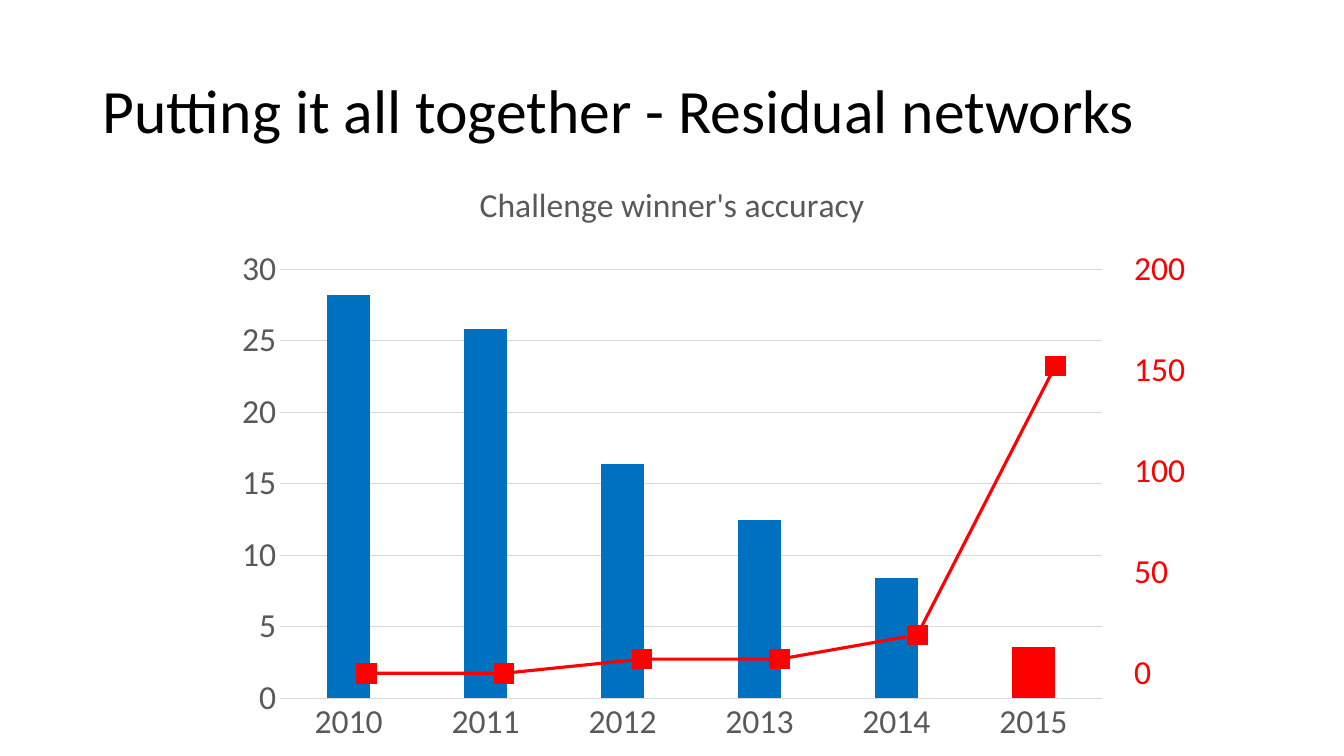
from lxml import etree
from pptx import Presentation
from pptx.chart.data import CategoryChartData
from pptx.dml.color import RGBColor
from pptx.enum.chart import (
    XL_AXIS_CROSSES,
    XL_CHART_TYPE,
    XL_MARKER_STYLE,
    XL_TICK_LABEL_POSITION,
    XL_TICK_MARK,
)
from pptx.enum.text import MSO_ANCHOR, PP_ALIGN
from pptx.oxml import parse_xml
from pptx.oxml.ns import nsdecls, qn
from pptx.util import Inches, Pt

COLUMNS = XL_CHART_TYPE.COLUMN_CLUSTERED
LINE = XL_CHART_TYPE.LINE_MARKERS
SQUARE = XL_MARKER_STYLE.SQUARE
AT_MAXIMUM = XL_AXIS_CROSSES.MAXIMUM
FAR_SIDE = XL_TICK_LABEL_POSITION.HIGH
NO_TICK = XL_TICK_MARK.NONE
MIDDLE = MSO_ANCHOR.MIDDLE
LEFT = PP_ALIGN.LEFT

BLACK = RGBColor(0x00, 0x00, 0x00)
GREY = RGBColor(0x59, 0x59, 0x59)
PALE = RGBColor(0xD9, 0xD9, 0xD9)
BLUE = RGBColor(0x00, 0x70, 0xC0)
RED = RGBColor(0xFF, 0x00, 0x00)

ACCURACY = "Challenge winner's accuracy"
ERRORS = {"2010": 28.2, "2011": 25.8, "2012": 16.4, "2013": 12.5, "2014": 8.4, "2015": 3.6}
LAYERS = {"1": 0, "2": 0, "3": 7, "4": 7, "5": 19, "6": 152}


class ChartSlide:
    """Holds the text style and the slide, and adds its elements."""

    font_name = "Calibri"
    label_size = Pt(24)

    def __init__(self, page):
        self.page = page

    def style_font(self, font, size, color):
        font.name = self.font_name
        font.size = size
        font.bold = False
        font.color.rgb = color

    def add_title(self, text, box):
        title = self.page.shapes.title
        title.left, title.top, title.width, title.height = map(Inches, box)
        frame = title.text_frame
        frame.text = text
        frame.vertical_anchor = MIDDLE
        para = frame.paragraphs[0]
        para.alignment = LEFT
        para.line_spacing = 0.9
        self.style_font(para.runs[0].font, Pt(44), BLACK)

    def add_chart(self, kind, name, values, box, plot_box):
        data = CategoryChartData()
        data.categories = list(values)
        data.add_series(name, list(values.values()))
        chart = self.page.shapes.add_chart(kind, *map(Inches, box), data).chart
        self.style_font(chart.font, Pt(10), BLACK)
        chart.has_legend = False
        chart.has_title = False
        self.clear_background(chart)
        self.place_plot(chart, box, plot_box)
        return chart

    def clear_background(self, chart):
        fill = parse_xml(
            f'<c:spPr {nsdecls("c", "a")}><a:noFill/><a:ln><a:noFill/></a:ln></c:spPr>'
        )
        chart.element.find(qn("c:chart")).addnext(fill)

    def place_plot(self, chart, box, plot_box):
        area = chart.element.find(qn("c:chart")).find(qn("c:plotArea"))
        for layout in area.findall(qn("c:layout")):
            area.remove(layout)
        layout = parse_xml(f'<c:layout {nsdecls("c")}><c:manualLayout/></c:layout>')
        left, top, width, height = box
        plot_left, plot_top, plot_width, plot_height = plot_box
        settings = {
            "layoutTarget": "inner",
            "xMode": "edge",
            "yMode": "edge",
            "x": (plot_left - left) / width,
            "y": (plot_top - top) / height,
            "w": plot_width / width,
            "h": plot_height / height,
        }
        for tag, value in settings.items():
            etree.SubElement(layout[0], qn(f"c:{tag}"), val=str(value))
        area.insert(0, layout)

    def style_axis(self, axis, color):
        axis.major_tick_mark = NO_TICK
        axis.minor_tick_mark = NO_TICK
        self.style_font(axis.tick_labels.font, self.label_size, color)

    def style_scale(self, axis, maximum, step, color):
        self.style_axis(axis, color)
        axis.minimum_scale = 0
        axis.maximum_scale = maximum
        axis.major_unit = step
        axis.format.line.fill.background()

    def add_error_columns(self, box, plot_box):
        chart = self.add_chart(COLUMNS, ACCURACY, ERRORS, box, plot_box)
        chart.has_title = True
        frame = chart.chart_title.text_frame
        frame.text = ACCURACY
        self.style_font(frame.paragraphs[0].runs[0].font, self.label_size, GREY)
        chart.chart_title.include_in_layout = False
        self.style_axis(chart.category_axis, GREY)
        self.style_scale(chart.value_axis, 30, 5, GREY)
        grid = chart.value_axis.major_gridlines
        for line in (chart.category_axis.format.line, grid.format.line):
            line.color.rgb = PALE
            line.width = Pt(0.75)
        plot = chart.plots[0]
        plot.vary_by_categories = False
        plot.gap_width = 219
        plot.overlap = -27
        series = plot.series[0]
        last_column = series.points[len(ERRORS) - 1]
        for part, color in ((series, BLUE), (last_column, RED)):
            part.format.fill.solid()
            part.format.fill.fore_color.rgb = color

    def add_layer_line(self, box, plot_box):
        chart = self.add_chart(LINE, "Series 1", LAYERS, box, plot_box)
        chart.category_axis.visible = False
        chart.category_axis.crosses = AT_MAXIMUM
        chart.value_axis.tick_label_position = FAR_SIDE
        chart.value_axis.has_major_gridlines = False
        self.style_scale(chart.value_axis, 200, 50, RED)
        plot = chart.plots[0]
        plot.vary_by_categories = False
        series = plot.series[0]
        series.smooth = False
        series.format.line.color.rgb = RED
        series.format.line.width = Pt(2.25)
        marker = series.marker
        marker.style = SQUARE
        marker.size = 14
        marker.format.fill.solid()
        marker.format.fill.fore_color.rgb = RED
        marker.format.line.color.rgb = RED


def main():
    deck = Presentation()
    deck.slide_width = Inches(13.33)
    deck.slide_height = Inches(7.5)
    slide = ChartSlide(deck.slides.add_slide(deck.slide_layouts[5]))
    slide.add_title("Putting it all together - Residual networks", (0.92, 0.4, 11.5, 1.45))
    slide.add_error_columns((2.22, 1.57, 8.89, 5.93), (2.78, 2.67, 8.15, 4.26))
    slide.add_layer_line((2.76, 2.38, 9.12, 4.59), (2.95, 2.67, 8.2, 4.01))
    deck.save("out.pptx")


if __name__ == "__main__":
    main()
